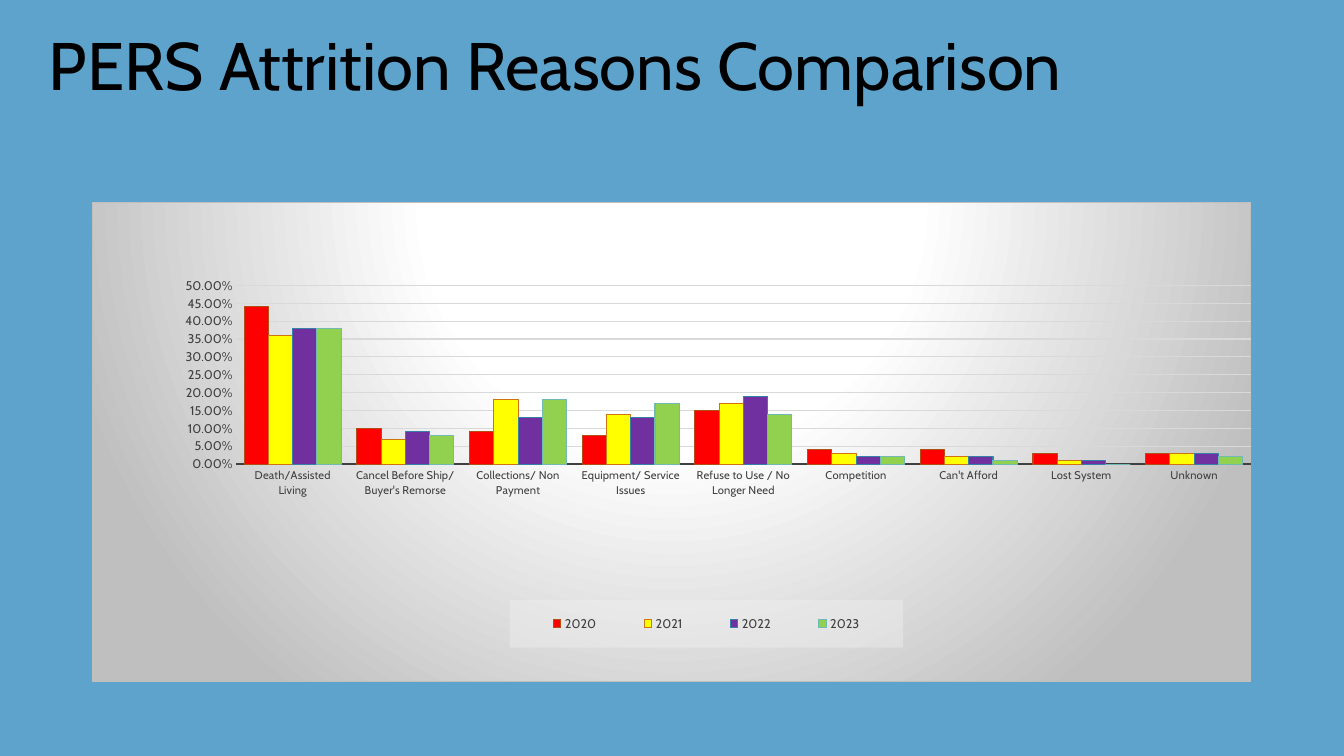
"""Build the PERS attrition reasons comparison slide."""
import lxml.etree
import pptx
import pptx.chart.data
import pptx.dml.color
import pptx.enum.chart
import pptx.enum.text
import pptx.oxml.ns
import pptx.util

HEADING = "PERS Attrition Reasons Comparison"
REASONS = [
    "Death/Assisted Living", "Cancel Before Ship/ Buyer's Remorse",
    "Collections/ Non Payment", "Equipment/ Service Issues",
    "Refuse to Use / No Longer Need", "Competition", "Can't Afford",
    "Lost System", "Unknown",
]
YEARS = [
    ("2020", "FF0000", "B24D15", (0.44, 0.1, 0.09, 0.08, 0.15, 0.04, 0.04, 0.03, 0.03)),
    ("2021", "FFFF00", "CF740E", (0.36, 0.07, 0.18, 0.14, 0.17, 0.03, 0.02, 0.01, 0.03)),
    ("2022", "7030A0", "357FA9", (0.38, 0.09, 0.13, 0.13, 0.19, 0.02, 0.02, 0.01, 0.03)),
    ("2023", "92D050", "70BAB2", (0.38, 0.08, 0.18, 0.17, 0.14, 0.02, 0.01, 0, 0.02)),
]
FONT = "Cabin"
SLIDE_SIZE = (960, 540)
HEADING_BOX = (27.5, 14.5, 862.5, 69)
CHART_BOX = (66, 144, 828, 343)
PLOT_BOX = (0.124, 0.174, 0.876, 0.373)
LEGEND_BOX = (0.36, 0.83, 0.34, 0.1)

PANEL_FILL = """<a:gradFill><a:gsLst>
<a:gs pos="0"><a:srgbClr val="FFFFFF"/></a:gs>
<a:gs pos="39000"><a:srgbClr val="FFFFFF"/></a:gs>
<a:gs pos="100000"><a:srgbClr val="BFBFBF"/></a:gs></a:gsLst>
<a:path path="circle"><a:fillToRect l="50000" t="-80000" r="50000" b="180000"/></a:path>
</a:gradFill><a:ln w="9525"><a:solidFill><a:srgbClr val="BFBFBF"/></a:solidFill></a:ln>"""
LEGEND_FILL = """<a:solidFill><a:srgbClr val="F2F2F2"><a:alpha val="39000"/></a:srgbClr></a:solidFill>
<a:ln><a:noFill/></a:ln>"""


def color(hex_value):
    return pptx.dml.color.RGBColor.from_string(hex_value)


def points(values):
    return [pptx.util.Pt(value) for value in values]


def apply(target, formats):
    for attribute, value in formats.items():
        setattr(target, attribute, value)


def style_font(font, size, hex_value):
    apply(font, {"name": FONT, "size": pptx.util.Pt(size)})
    font.color.rgb = color(hex_value)


def style_line(line, hex_value, width):
    line.color.rgb = color(hex_value)
    line.width = pptx.util.Pt(width)


def chart_xml(tag, content):
    names = pptx.oxml.ns.nsdecls("c", "a")
    return lxml.etree.fromstring(f"<c:{tag} {names}>{content}</c:{tag}>")


def layout_xml(box, target=""):
    modes = '<c:xMode val="edge"/><c:yMode val="edge"/>'
    sides = "".join(f'<c:{side} val="{value}"/>' for side, value in zip("xywh", box))
    return chart_xml("layout", f"<c:manualLayout>{target}{modes}{sides}</c:manualLayout>")


def find(parent, tag):
    return parent.find(pptx.oxml.ns.qn(f"c:{tag}"))


def drop(parent, tag):
    found = find(parent, tag)
    if found is not None:
        parent.remove(found)


def style_axes(chart):
    reasons, shares = chart.category_axis, chart.value_axis
    no_ticks = pptx.enum.chart.XL_TICK_MARK.NONE
    for axis, size in ((reasons, 8), (shares, 9)):
        apply(axis, {"major_tick_mark": no_ticks, "minor_tick_mark": no_ticks})
        style_font(axis.tick_labels.font, size, "404040")
    style_line(reasons.format.line, "404040", 1.5)
    apply(shares, {"minimum_scale": 0, "maximum_scale": 0.5, "major_unit": 0.05,
                   "has_major_gridlines": True})
    apply(shares.tick_labels, {"number_format": "0.00%", "number_format_is_linked": False})
    shares.format.line.fill.background()
    style_line(shares.major_gridlines.format.line, "D9D9D9", 0.75)


def style_legend(chart):
    chart.has_legend = True
    legend = chart.legend
    apply(legend, {"position": pptx.enum.chart.XL_LEGEND_POSITION.BOTTOM,
                   "include_in_layout": False})
    style_font(legend.font, 9, "404040")
    element = find(find(chart.element, "chart"), "legend")
    drop(element, "layout")
    overlay = find(element, "overlay")
    overlay.addprevious(layout_xml(LEGEND_BOX))
    overlay.addnext(chart_xml("spPr", LEGEND_FILL))


def add_attrition_chart(slide):
    data = pptx.chart.data.CategoryChartData(number_format="0.00%")
    data.categories = REASONS
    for year, _, _, shares in YEARS:
        data.add_series(year, shares)
    kind = pptx.enum.chart.XL_CHART_TYPE.COLUMN_CLUSTERED
    chart = slide.shapes.add_chart(kind, *points(CHART_BOX), data).chart
    chart.has_title = False
    style_font(chart.font, 10, "FFFFFF")
    apply(chart.plots[0], {"gap_width": 65, "overlap": 0, "vary_by_categories": False})
    for series, (_, fill, outline, _) in zip(chart.plots[0].series, YEARS):
        series.format.fill.solid()
        series.format.fill.fore_color.rgb = color(fill)
        style_line(series.format.line, outline, 0.75)
    style_axes(chart)
    style_legend(chart)
    body = find(chart.element, "chart")
    body.addnext(chart_xml("spPr", PANEL_FILL))
    plot_area = find(body, "plotArea")
    drop(plot_area, "layout")
    plot_area.insert(0, layout_xml(PLOT_BOX, '<c:layoutTarget val="inner"/>'))


def add_heading(slide):
    heading = slide.shapes.title
    apply(heading, dict(zip(("left", "top", "width", "height"), points(HEADING_BOX))))
    heading.text_frame.text = HEADING
    apply(heading.text_frame, {"vertical_anchor": pptx.enum.text.MSO_ANCHOR.MIDDLE,
                               "auto_size": pptx.enum.text.MSO_AUTO_SIZE.NONE,
                               "word_wrap": True})
    paragraph = heading.text_frame.paragraphs[0]
    apply(paragraph, {"alignment": pptx.enum.text.PP_ALIGN.LEFT, "line_spacing": 0.9})
    style_font(paragraph.runs[0].font, 48, "000000")


def main():
    deck = pptx.Presentation()
    apply(deck, dict(zip(("slide_width", "slide_height"), points(SLIDE_SIZE))))
    slide = deck.slides.add_slide(deck.slide_layouts[5])
    slide.background.fill.solid()
    slide.background.fill.fore_color.rgb = color("5DA3CC")
    add_heading(slide)
    add_attrition_chart(slide)
    deck.save("out.pptx")


if __name__ == "__main__":
    main()
